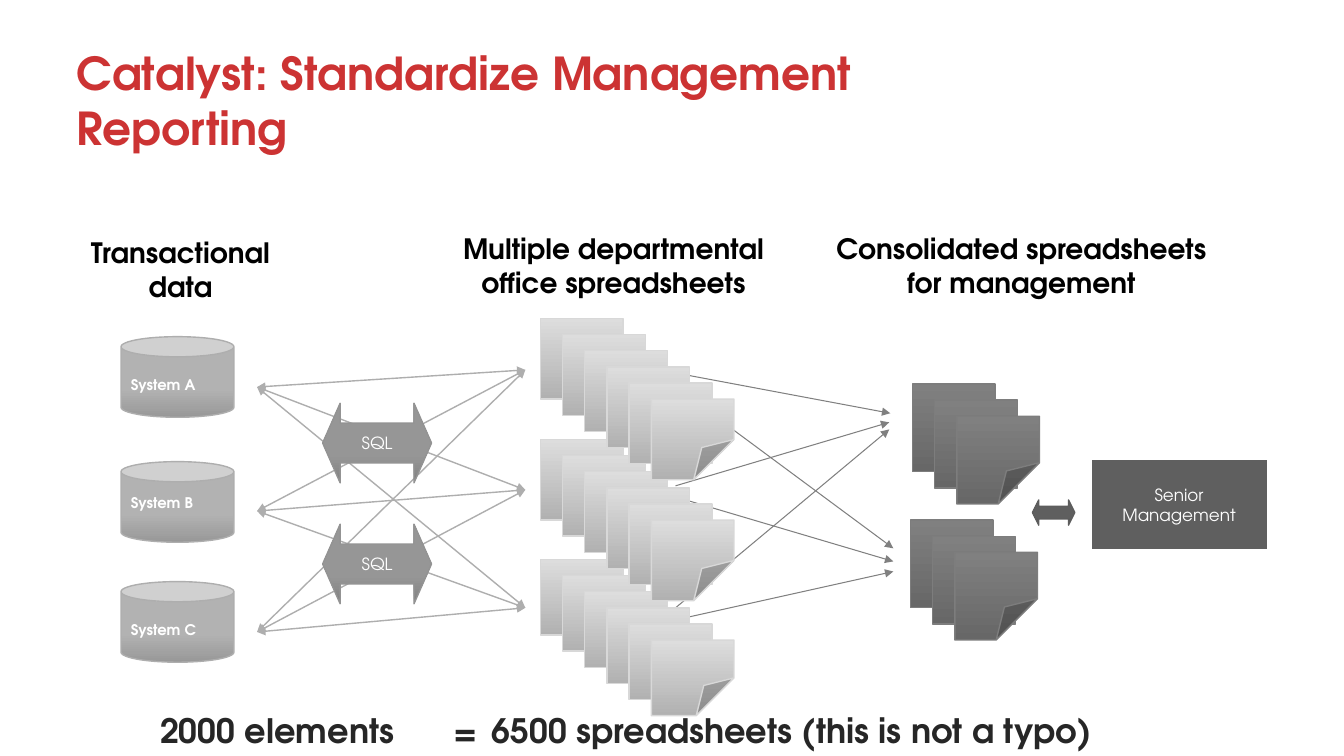
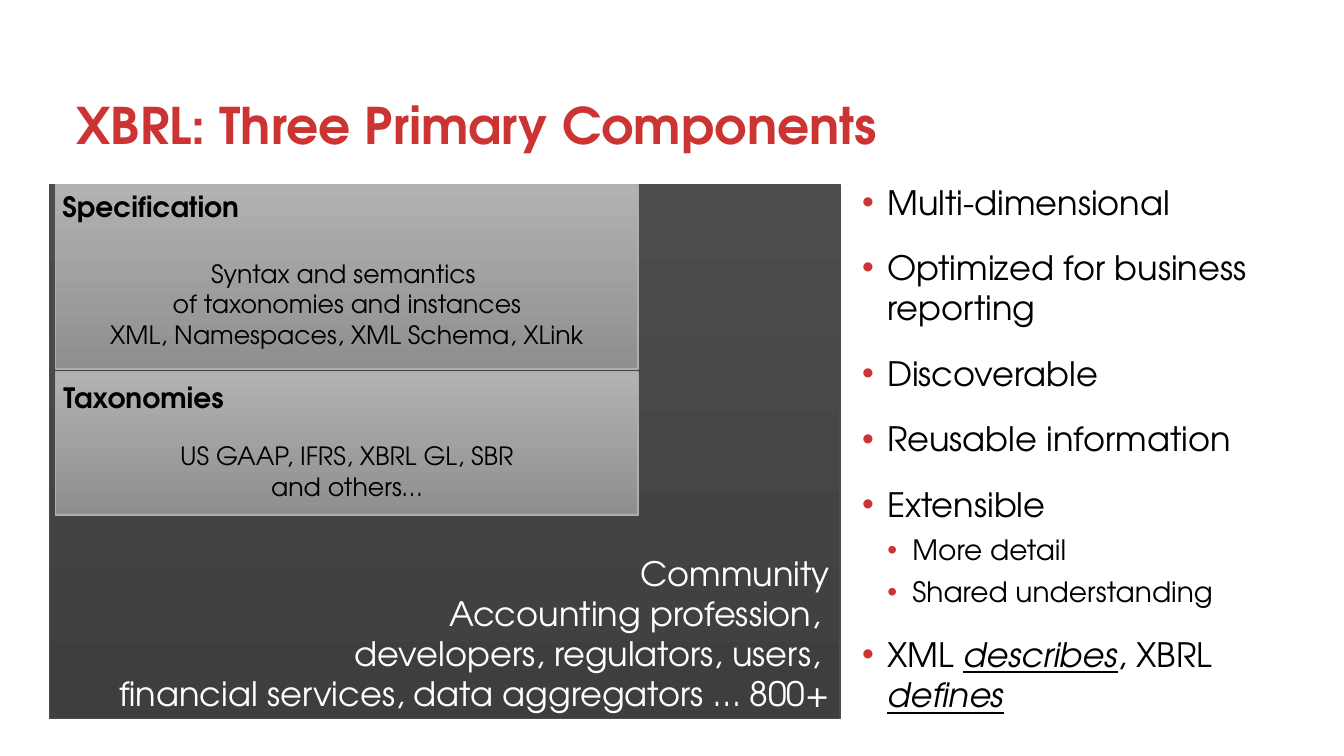
import itertools

import pptx
import pptx.dml.color
import pptx.enum.shapes
import pptx.enum.text
import pptx.oxml
import pptx.oxml.ns
import pptx.util

SHAPES = pptx.enum.shapes.MSO_SHAPE
ANCHORS = pptx.enum.text.MSO_ANCHOR
ALIGNS = pptx.enum.text.PP_ALIGN
FITS = pptx.enum.text.MSO_AUTO_SIZE
FONT = "TeX Gyre Adventor"
COLORS = {
    "title": "CC3333", "text": "000000", "total": "262626", "light": "FFFFFF",
    "management": "5F5F5F", "feed": "AEAEAE", "merge": "808080",
}
# Fill styles: bottom colour, top colour, share where the top colour starts, outline
STYLES = {
    "department": ("B1B1B1", "DDDDDD", 1, "D8D8D8"),
    "consolidated": ("676767", "808080", 1, "7D7D7D"),
    "exchange": ("515151", "5F5F5F", 0.35, "5D5D5D"),
    "sql": ("808080", "969696", 0.35, "939393"),
    "system": ("989898", "B2B2B2", 0.35, "AEAEAE"),
    "community": ("3E3E3E", "4D4D4D", 1, "4B4B4B"),
    "component": ("8F8F8F", "B2B2B2", 1, "AEAEAE"),
}

# Content of the reporting slide
HEADINGS = [
    ("Transactional data", (0.58, 2.29, 2.42, 0.77)),
    ("Multiple departmental office spreadsheets", (4.25, 2.25, 3.67, 0.77)),
    ("Consolidated spreadsheets for management", (8.14, 2.25, 3.98, 0.77)),
]
SYSTEMS = [  # label, top of the can, top of the label
    ("System A", 3.34, 3.68), ("System B", 4.58, 4.85), ("System C", 5.77, 6.11),
]
SQL_TOPS = [4, 5.2]
SYSTEM_ENDS = [3.84, 5.07, 6.27]
DEPARTMENT_ENDS = [3.67, 4.86, 6.03]
MERGES = [  # height at the departments, end point at the consolidated sheets
    (6.03, 8.82, 4.26), (4.93, 8.86, 5.57), (4.82, 8.82, 4.19),
    (3.84, 8.86, 5.44), (6.15, 8.86, 5.67), (3.7, 8.83, 4.1),
]
STACKS = [  # style, sheets, left, top, sheet height; lowest stack first
    ("department", 6, 5.36, 5.55, 0.75),
    ("department", 6, 5.36, 4.36, 0.8),
    ("department", 6, 5.36, 3.16, 0.8),
    ("consolidated", 3, 9.05, 3.81, 0.87),
    ("consolidated", 3, 9.03, 5.16, 0.87),
]
SHEET_WIDTH, SHEET_RIGHT, SHEET_DOWN = 0.82, 0.22, 0.16
TOTALS = [
    ("2000 elements", (1.49, 6.99, 2.54, 0.5)),
    ("=", (4.4, 7, 0.4, 0.5)),
    ("6500 spreadsheets (this is not a typo)", (4.78, 6.99, 6.18, 0.5)),
]

# Content of the components slide
COMMUNITY = [
    "Community",
    "Accounting profession, ",
    "developers, regulators, users, ",
    "financial services, data aggregators … 800+",
]
COMPONENTS = [  # name, its place, lines, their place
    ("Specification", (0.52, 1.83, 1.97, 0.44),
     ["Syntax and semantics ", "of taxonomies and instances",
      "XML, Namespaces, XML Schema, XLink"], (0.55, 1.83, 5.78, 1.83)),
    ("Taxonomies", (0.53, 3.73, 1.82, 0.44),
     ["US GAAP, IFRS, XBRL GL, SBR", "and others…"], (0.55, 3.69, 5.78, 1.42)),
]
FEATURES = [  # level, spans; every second span is emphasized
    (0, ["Multi-dimensional"]),
    (0, ["Optimized for business reporting"]),
    (0, ["Discoverable"]),
    (0, ["Reusable information"]),
    (0, ["Extensible"]),
    (1, ["More detail"]),
    (1, ["Shared understanding"]),
    (0, ["XML ", "describes", ", XBRL ", "defines"]),
]
LEVELS = [(24, 18), (20, 6)]  # text size, space before


def rgb(value):
    return pptx.dml.color.RGBColor.from_string(value)


def inches(values):
    return [pptx.util.Inches(value) for value in values]


def append_element(parent, name, attributes="", content=""):
    """Add a drawing element such as an arrowhead or a bullet."""
    parent.append(pptx.oxml.parse_xml(
        f'<a:{name} {pptx.oxml.ns.nsdecls("a")} {attributes}>{content}</a:{name}>'))


def place(item, at):
    item.left, item.top, item.width, item.height = inches(at)


def format_font(font, size, color, bold=False):
    font.name, font.size, font.bold = FONT, pptx.util.Pt(size), bold
    font.color.rgb = rgb(color)


def write(shape, lines, size=20, color=COLORS["text"], bold=False, align=ALIGNS.LEFT,
          anchor=ANCHORS.TOP, wrap=True, top_inset=0.05, fit=FITS.NONE):
    """Fill a shape with one paragraph for each line."""
    frame = shape.text_frame
    frame.word_wrap, frame.auto_size, frame.vertical_anchor = wrap, fit, anchor
    frame.margin_top = pptx.util.Inches(top_inset)
    for number, line in enumerate(lines):
        para = frame.add_paragraph() if number else frame.paragraphs[0]
        para.alignment = align
        span = para.add_run()
        span.text = line
        format_font(span.font, size, color, bold)


def add_text(page, text, at, **options):
    write(page.shapes.add_textbox(*inches(at)), [text], **options)


def add_label(page, text, at, **options):
    add_text(page, text, at, bold=True, wrap=False, fit=FITS.SHAPE_TO_FIT_TEXT, **options)


def add_block(page, kind, at, style, adjustments=None):
    shape = page.shapes.add_shape(kind, *inches(at))
    shape.shadow.inherit = False
    if adjustments:
        guides = shape._element.spPr.prstGeom.get_or_add_avLst()
        for guide in list(guides):
            guides.remove(guide)
        for name, value in adjustments.items():
            append_element(guides, "gd", f'name="{name}" fmla="val {round(value * 100000)}"')
    bottom, top, reach, outline = STYLES[style]
    shape.fill.gradient()
    shape.fill.gradient_angle = 90
    for stop, color, position in zip(shape.fill.gradient_stops, (bottom, top), (0, reach)):
        stop.color.rgb, stop.position = rgb(color), position
    shape.line.color.rgb, shape.line.width = rgb(outline), pptx.util.Pt(1)
    return shape


def add_arrow(page, start, end, color, width, ends):
    arrow = page.shapes.add_connector(
        pptx.enum.shapes.MSO_CONNECTOR.STRAIGHT, *inches(start + end))
    arrow.line.color.rgb, arrow.line.width = rgb(color), pptx.util.Pt(width)
    for name in ends:
        append_element(arrow.line._get_or_add_ln(), name, 'type="triangle"')
    append_element(arrow._element.spPr, "effectLst")


def add_page(deck, layout, title, size):
    page = deck.slides.add_slide(deck.slide_layouts[layout])
    place(page.shapes.title, (0.66, 0.33, 9.49, 1.25))
    write(page.shapes.title, [title], size=size, color=COLORS["title"], bold=True,
          anchor=ANCHORS.BOTTOM)
    return page


def add_bullet(para, level):
    para.level = level
    properties = para._p.get_or_add_pPr()
    properties.set("marL", str(pptx.util.Inches(0.25 * (level + 1))))
    properties.set("indent", str(pptx.util.Inches(-0.25)))
    append_element(properties, "buClr", content=f'<a:srgbClr val="{COLORS["title"]}"/>')
    append_element(properties, "buChar", 'char="•"')


def build_reporting(deck):
    page = add_page(deck, 5, "Catalyst: Standardize Management Reporting", 32.4)
    for text, at in HEADINGS:
        add_text(page, text, at, bold=True, align=ALIGNS.CENTER)

    # Arrows between the three stages
    for start, end in itertools.product(SYSTEM_ENDS, DEPARTMENT_ENDS):
        add_arrow(page, (2.55, start), (5.21, end), COLORS["feed"], 1, ("headEnd", "tailEnd"))
    for start, right, end in MERGES:
        add_arrow(page, (6.7, start), (right, end), COLORS["merge"], 0.75, ("tailEnd",))

    # Spreadsheet stacks, only the front sheet has a folded corner
    for style, count, left, top, height in STACKS:
        for number in range(count):
            front = number == count - 1
            at = (left + number * SHEET_RIGHT, top + number * SHEET_DOWN, SHEET_WIDTH, height)
            add_block(page, SHAPES.FOLDED_CORNER if front else SHAPES.RECTANGLE, at, style,
                      {"adj": 0.5} if front else None)

    # Queries and source systems
    for top in SQL_TOPS:
        arrow = add_block(page, SHAPES.LEFT_RIGHT_ARROW, (3.2, top, 1.08, 0.79), "sql",
                          {"adj1": 0.5, "adj2": 0.22})
        write(arrow, ["SQL"], size=12, color=COLORS["light"], align=ALIGNS.CENTER,
              anchor=ANCHORS.MIDDLE, wrap=False)
    for label, top, label_top in SYSTEMS:
        add_block(page, SHAPES.CAN, (1.2, top, 1.12, 0.8), "system", {"adj": 0.25})
        add_label(page, label, (1.2, label_top, 0.86, 0.28), size=10.5,
                  color=COLORS["light"])

    # Senior management
    add_block(page, SHAPES.LEFT_RIGHT_ARROW, (10.24, 4.96, 0.42, 0.25), "exchange",
              {"adj1": 0.5, "adj2": 0.25})
    box = page.shapes.add_shape(SHAPES.RECTANGLE, *inches((10.81, 4.55, 1.77, 0.91)))
    box.shadow.inherit = False
    box.fill.solid()
    box.fill.fore_color.rgb = rgb(COLORS["management"])
    box.line.color.rgb, box.line.width = rgb(COLORS["light"]), pptx.util.Pt(2.5)
    write(box, ["Senior Management"], size=12, color=COLORS["light"], align=ALIGNS.CENTER,
          anchor=ANCHORS.MIDDLE)

    for text, at in TOTALS:
        add_label(page, text, at, size=24, color=COLORS["total"])


def build_components(deck):
    page = add_page(deck, 1, "XBRL: Three Primary Components", 36)

    # Nested component boxes
    community = add_block(page, SHAPES.RECTANGLE, (0.49, 1.83, 7.84, 5.3), "community")
    write(community, COMMUNITY, size=24, color=COLORS["light"], align=ALIGNS.RIGHT,
          anchor=ANCHORS.BOTTOM)
    for name, name_at, lines, at in COMPONENTS:
        box = add_block(page, SHAPES.RECTANGLE, at, "component")
        write(box, lines, size=18, align=ALIGNS.CENTER, anchor=ANCHORS.MIDDLE, top_inset=0.59)
        add_label(page, name, name_at)

    # Feature list
    body = page.placeholders[1]
    place(body, (8.45, 1.75, 4.88, 5.39))
    body.text_frame.auto_size = FITS.NONE
    for number, (level, spans) in enumerate(FEATURES):
        para = body.text_frame.add_paragraph() if number else body.text_frame.paragraphs[0]
        add_bullet(para, level)
        size, before = LEVELS[level]
        para.space_before = pptx.util.Pt(before if number else 0)
        for position, text in enumerate(spans):
            span = para.add_run()
            span.text = text
            format_font(span.font, size, COLORS["text"])
            span.font.italic = span.font.underline = position % 2 == 1


def main():
    deck = pptx.Presentation()
    deck.slide_width, deck.slide_height = inches((13.33, 7.5))
    build_reporting(deck)
    build_components(deck)
    deck.save("out.pptx")


if __name__ == "__main__":
    main()
